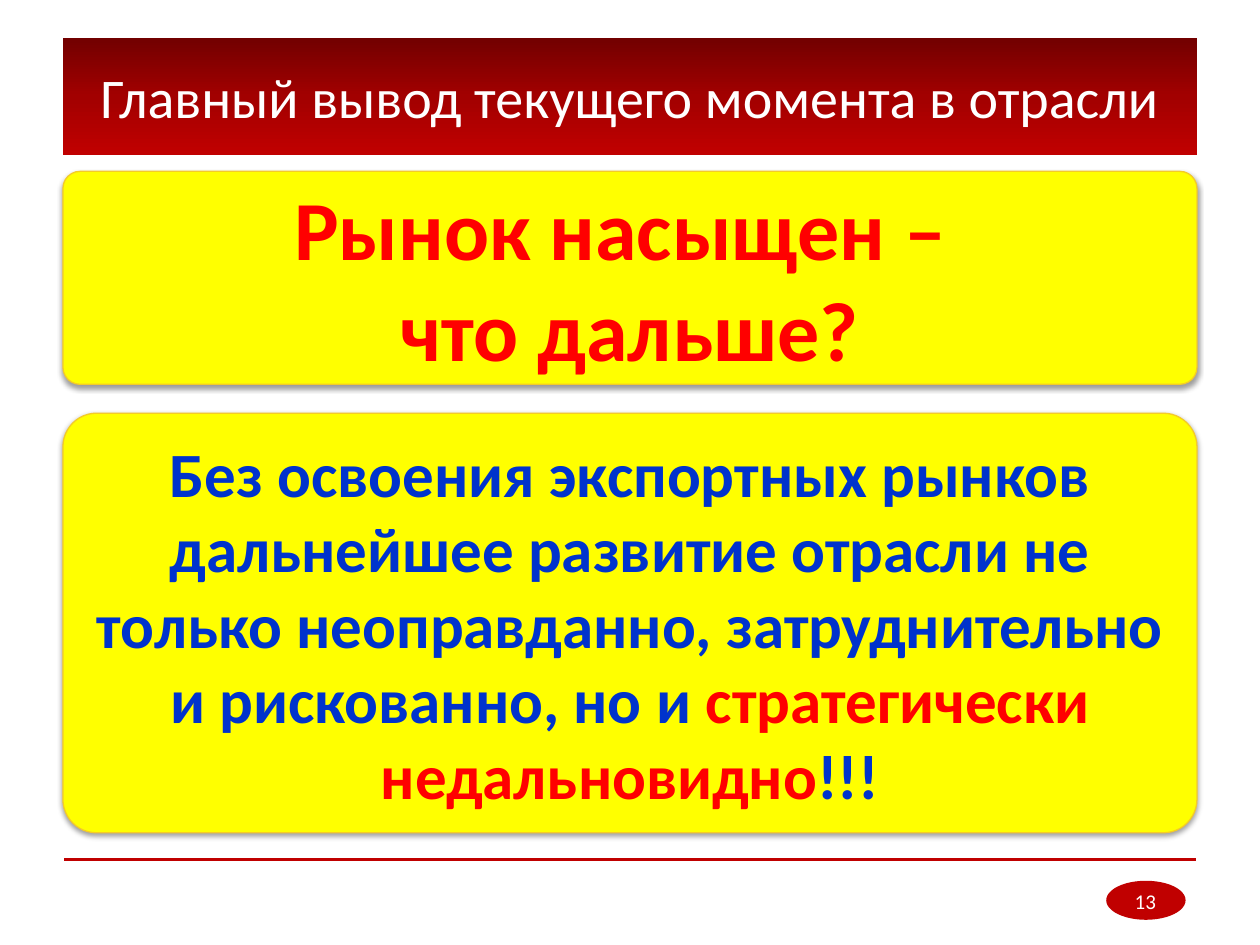
"""Builds the slide about the main conclusion for the industry."""
from copy import deepcopy

from lxml.etree import SubElement
from pptx import Presentation
from pptx.dml.color import RGBColor
from pptx.enum.shapes import MSO_CONNECTOR, MSO_SHAPE
from pptx.enum.text import MSO_ANCHOR, MSO_AUTO_SIZE, PP_ALIGN
from pptx.oxml.ns import qn
from pptx.util import Inches, Pt

FONT = "Calibri"
DARK_RED, RED, YELLOW = "C00000", "FF0000", "FFFF00"
GOLD, BLUE, WHITE = "F4CB27", "0033CC", "FFFFFF"
LEFT, WIDTH = 0.5, 9


def color(value):
    """Turn a hex string into a colour."""
    return RGBColor.from_string(value)


class SlideBuilder:
    """Holds the text style and the slide being built."""

    def __init__(self, slide, font_name):
        """Remember the slide and the font."""
        self.slide = slide
        self.font_name = font_name

    def fill_text(self, text_frame, paragraphs, size, bold=False):
        """Set centred paragraphs, each a list of text and colour pairs."""
        text_frame.word_wrap = True
        text_frame.auto_size = MSO_AUTO_SIZE.NONE
        text_frame.vertical_anchor = MSO_ANCHOR.MIDDLE
        text_frame.text = "\n".join("" for _ in paragraphs)
        for paragraph, parts in zip(text_frame.paragraphs, paragraphs):
            paragraph.alignment = PP_ALIGN.CENTER
            for text, text_color in parts:
                run = paragraph.add_run()
                run.text = text
                run.font.name = self.font_name
                run.font.size = Pt(size)
                run.font.bold = bold
                run.font.color.rgb = color(text_color)

    def title(self, text, top, height, gradient):
        """Place the title on a vertical three-colour gradient."""
        shape = self.slide.shapes.title
        shape.left, shape.top = Inches(LEFT), Inches(top)
        shape.width, shape.height = Inches(WIDTH), Inches(height)
        shape.fill.gradient()
        shape.fill.gradient_angle = 270
        stop_list = shape._element.spPr.find(".//" + qn("a:gsLst"))
        stop_list.append(deepcopy(stop_list[-1]))
        for index, (stop, value) in enumerate(zip(shape.fill.gradient_stops, gradient)):
            stop.position = index / 2
            stop.color.rgb = color(value)
        self.fill_text(shape.text_frame, [[(text, WHITE)]], 32)

    def panel(self, top, height, paragraphs, size):
        """Add a yellow rounded panel with a soft shadow."""
        shape = self.slide.shapes.add_shape(
            MSO_SHAPE.ROUNDED_RECTANGLE,
            Inches(LEFT), Inches(top), Inches(WIDTH), Inches(height))
        shape.adjustments[0] = 0.08
        shape.fill.solid()
        shape.fill.fore_color.rgb = color(YELLOW)
        shape.line.color.rgb = color(GOLD)
        shape.line.width = Pt(0.75)
        self.add_shadow(shape)
        self.fill_text(shape.text_frame, paragraphs, size, bold=True)

    def add_shadow(self, shape):
        """Give a shape a soft shadow below it."""
        shape.shadow.inherit = False
        effects = shape._element.spPr.find(qn("a:effectLst"))
        shadow = SubElement(
            effects, qn("a:outerShdw"), blurRad=str(Pt(3.1)), dist=str(Pt(1.6)),
            dir="5400000", rotWithShape="0")
        shadow_color = SubElement(shadow, qn("a:srgbClr"), val="000000")
        SubElement(shadow_color, qn("a:alpha"), val="38000")

    def rule(self, top):
        """Add the red line above the footer."""
        line = self.slide.shapes.add_connector(
            MSO_CONNECTOR.STRAIGHT, Inches(9.49), Inches(top), Inches(0.51), Inches(top))
        line.line.color.rgb = color(DARK_RED)
        line.line.width = Pt(1.5)
        SubElement(line._element.spPr, qn("a:effectLst"))

    def page_number(self, number):
        """Add the page number on its red ellipse."""
        ellipse = self.slide.shapes.add_shape(
            MSO_SHAPE.OVAL, Inches(8.78), Inches(6.99), Inches(0.63), Inches(0.31))
        ellipse.shadow.inherit = False
        ellipse.fill.solid()
        ellipse.fill.fore_color.rgb = color(DARK_RED)
        ellipse.line.fill.background()
        text_box = self.slide.shapes.add_textbox(
            Inches(8.62), Inches(6.95), Inches(0.94), Inches(0.4))
        self.fill_text(text_box.text_frame, [[(number, WHITE)]], 12)


def main():
    """Build and save the presentation."""
    presentation = Presentation()
    presentation.slide_width, presentation.slide_height = Inches(10), Inches(7.5)
    slide = presentation.slides.add_slide(presentation.slide_layouts[5])
    builder = SlideBuilder(slide, FONT)
    builder.title("Главный вывод текущего момента в отрасли", 0.3, 0.93,
                  ["720000", "A20000", DARK_RED])
    builder.panel(1.36, 1.69, [[("Рынок насыщен – ", RED)], [("что дальше?", RED)]], 48)
    builder.panel(3.28, 3.33, [[
        ("Без освоения экспортных рынков дальнейшее развитие отрасли не только "
         "неоправданно, затруднительно и рискованно, но и ", BLUE),
        ("стратегически недальновидно", RED),
        ("!!!", BLUE),
    ]], 36)
    builder.rule(6.82)
    builder.page_number("13")
    presentation.save("out.pptx")


if __name__ == "__main__":
    main()
